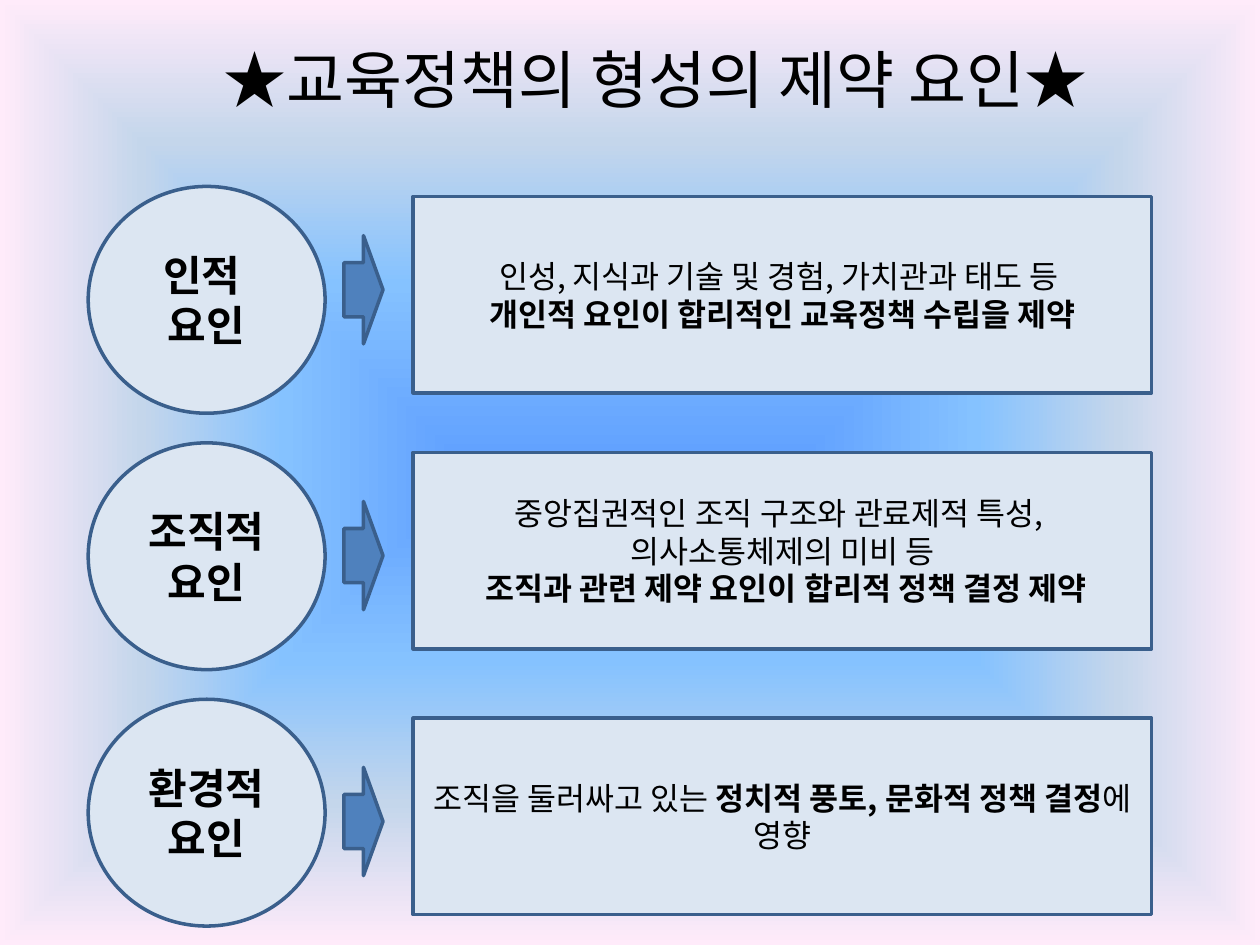
from pptx import Presentation
from pptx.dml.color import RGBColor
from pptx.enum.shapes import MSO_SHAPE
from pptx.enum.text import MSO_ANCHOR, PP_ALIGN
from pptx.oxml import parse_xml
from pptx.oxml.ns import qn
from pptx.util import Inches, Pt

OVAL, ARROW, RECTANGLE = MSO_SHAPE.OVAL, MSO_SHAPE.RIGHT_ARROW, MSO_SHAPE.RECTANGLE
MIDDLE, CENTER = MSO_ANCHOR.MIDDLE, PP_ALIGN.CENTER
FONT = "Noto Sans CJK KR"
DRAWING_NS = "http://schemas.openxmlformats.org/drawingml/2006/main"
BLACK, PALE, BLUE, OUTLINE = "000000", "DCE6F2", "4F81BD", "3A5F8C"
BACKGROUND_STOPS = [(0, "5E9EFF"), (40, "85C2FF"), (70, "C4D6EB"), (100, "FFEBFA")]

# Each factor: label paragraphs, then description paragraphs of (text, bold) runs
FACTORS = [
    (["인적 ", "요인"],
     [[("인성, 지식과 기술 및 경험, 가치관과 태도 등 ", False)],
      [("개인적 요인이 합리적인 교육정책 수립을 제약", True)]]),
    (["조직적 요인"],
     [[("중앙집권적인 조직 구조와 관료제적 특성, ", False)],
      [("의사소통체제의 미비 등", False)],
      [(" 조직과 관련 제약 요인이 합리적 정책 결정 제약", True)]]),
    (["환경적 요인"],
     [[("조직을 둘러싸고 있는 ", False), ("정치적 풍토, 문화적 정책 결정", True),
       ("에 영향", False)]]),
]
CIRCLE_TOPS = [1.48 + 2.035 * row for row in range(3)]
ARROW_TOPS = [1.87 + 2.11 * row for row in range(3)]
BOX_TOPS = [1.56, 3.59, 5.7]


def color(value):
    return RGBColor.from_string(value)


def write_text(frame, paragraphs, size):
    frame.word_wrap = True
    frame.vertical_anchor = MIDDLE
    for index, runs in enumerate(paragraphs):
        para = frame.paragraphs[0] if index == 0 else frame.add_paragraph()
        para.alignment = CENTER
        for text, bold in runs:
            span = para.add_run()
            span.text = text
            span.font.size = Pt(size)
            span.font.bold = bold
            span.font.name = FONT
            span.font.color.rgb = color(BLACK)
            # Hangul takes the East Asian typeface
            east_asian = span.font._element.makeelement(qn("a:ea"), {"typeface": FONT})
            span.font._element.find(qn("a:latin")).addnext(east_asian)


def add_outlined_shape(page, kind, box, fill):
    shape = page.shapes.add_shape(kind, *[Inches(length) for length in box])
    shape.shadow.inherit = False
    shape.fill.solid()
    shape.fill.fore_color.rgb = color(fill)
    shape.line.color.rgb = color(OUTLINE)
    shape.line.width = Pt(2)
    return shape


def paint_background(page):
    page.background.fill.gradient()
    stops = "".join(f'<a:gs pos="{position * 1000}"><a:srgbClr val="{value}"/></a:gs>'
                    for position, value in BACKGROUND_STOPS)
    gradient = parse_xml(
        f'<a:gradFill xmlns:a="{DRAWING_NS}" rotWithShape="1"><a:gsLst>{stops}</a:gsLst>'
        '<a:path path="shape"><a:fillToRect l="50000" t="50000" r="50000" b="50000"/>'
        '</a:path></a:gradFill>')
    default = next(page.background._cSld.iter(qn("a:gradFill")))
    default.getparent().replace(default, gradient)


def add_title(page, box):
    title = page.shapes.title
    title.left, title.top, title.width, title.height = [Inches(length) for length in box]
    write_text(title.text_frame, [[("★교육정책의 형성의 제약 요인★", False)]], 36)


def add_label(page, box, lines):
    circle = add_outlined_shape(page, OVAL, box, PALE)
    write_text(circle.text_frame, [[(line, True)] for line in lines], 24)


def add_description(page, box, paragraphs):
    panel = add_outlined_shape(page, RECTANGLE, box, PALE)
    write_text(panel.text_frame, paragraphs, 18)


def main():
    deck = Presentation()
    deck.slide_width, deck.slide_height = Inches(10), Inches(7.5)
    page = deck.slides.add_slide(deck.slide_layouts[5])
    paint_background(page)
    add_title(page, (0.7, 0, 9, 1.25))

    # One row per factor: circle, arrow, description
    rows = zip(FACTORS, CIRCLE_TOPS, ARROW_TOPS, BOX_TOPS)
    for (label, description), circle_top, arrow_top, box_top in rows:
        add_label(page, (0.7, circle_top, 1.88, 1.8), label)
        add_outlined_shape(page, ARROW, (2.73, arrow_top, 0.31, 0.86), BLUE)
        add_description(page, (3.28, box_top, 5.86, 1.56), description)
    deck.save("out.pptx")


if __name__ == "__main__":
    main()
